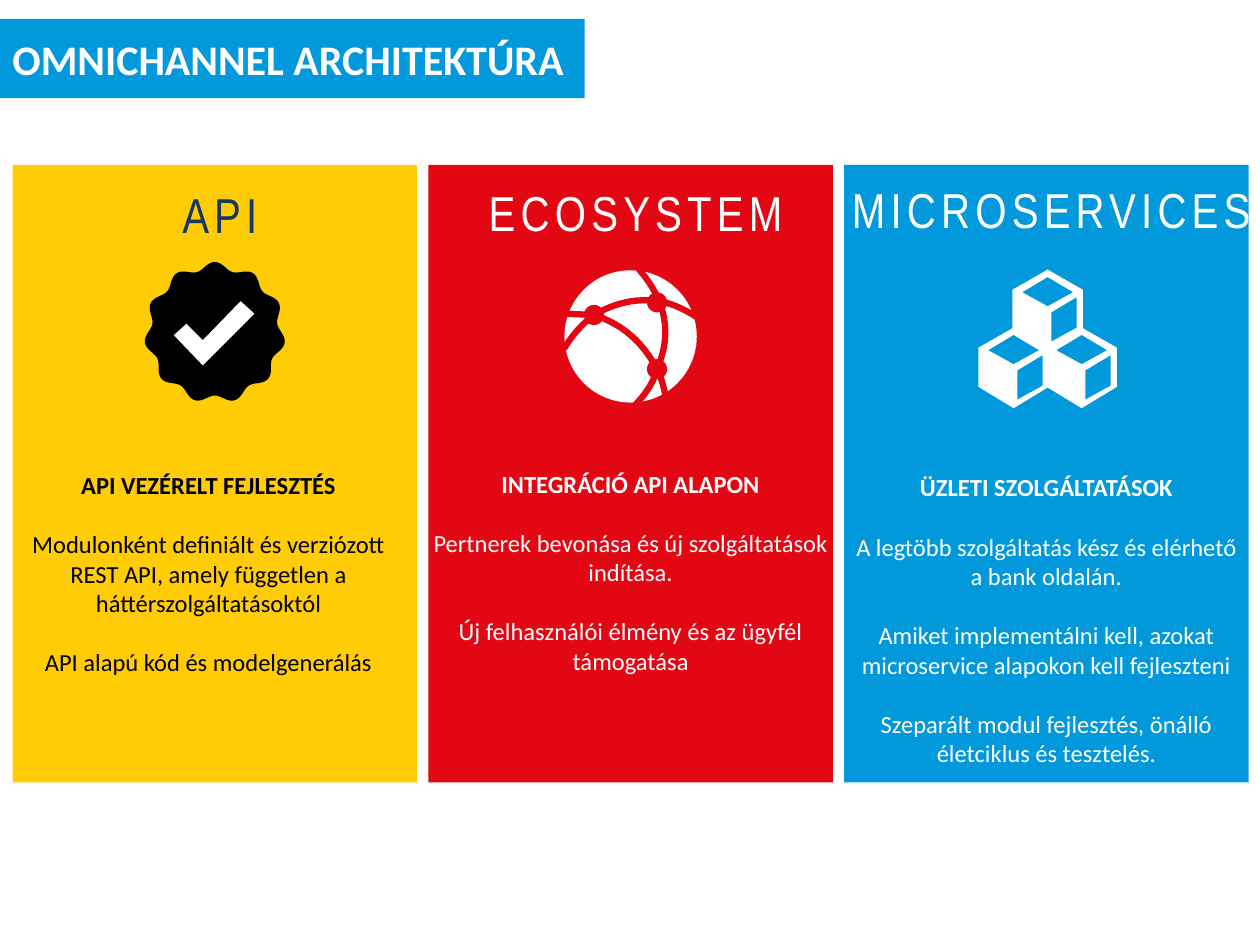
"""Builds the omnichannel architecture slide with three illustrated columns."""
from math import cos, pi, sin

from pptx import Presentation
from pptx.dml.color import RGBColor
from pptx.enum.shapes import MSO_SHAPE
from pptx.enum.text import MSO_ANCHOR, PP_ALIGN
from pptx.util import Inches, Pt

RECTANGLE, OVAL = MSO_SHAPE.RECTANGLE, MSO_SHAPE.OVAL
LEFT, CENTER = PP_ALIGN.LEFT, PP_ALIGN.CENTER
TOP, MIDDLE = MSO_ANCHOR.TOP, MSO_ANCHOR.MIDDLE

COLORS = {
    "blue": "0199DB", "yellow": "FFCC06", "red": "E30613",
    "navy": "17375E", "white": "FFFFFF", "black": "000000",
}
COLUMNS, ROWS = 100, 75
PANEL_LEFT, PANEL_TOP, PANEL_WIDTH, PANEL_HEIGHT, PANEL_PITCH = 1, 13.1, 32.1, 49, 33

PANELS = [
    dict(fill="yellow", heading="API", heading_color="navy", heading_top=14.6,
         heading_width=21.9, text_color="black", text_top=36.9, text_width=31.1,
         lines=["API VEZÉRELT FEJLESZTÉS",
                "Modulonként definiált és verziózott REST API, amely független a "
                "háttérszolgáltatásoktól",
                "API alapú kód és modelgenerálás"]),
    dict(fill="red", heading="ECOSYSTEM", heading_color="white", heading_top=14.5,
         heading_width=32, text_color="white", text_top=36.8, text_width=32.1,
         lines=["INTEGRÁCIÓ API ALAPON",
                "Pertnerek bevonása és új szolgáltatások indítása.",
                "Új felhasználói élmény és az ügyfél támogatása"]),
    dict(fill="blue", heading="MICROSERVICES", heading_color="white", heading_top=14.2,
         heading_width=40.4, text_color="white", text_top=37.1, text_width=32.1,
         lines=["ÜZLETI SZOLGÁLTATÁSOK",
                "A legtöbb szolgáltatás kész és elérhető a bank oldalán.",
                "Amiket implementálni kell, azokat microservice alapokon kell fejleszteni",
                "Szeparált modul fejlesztés, önálló életciklus és tesztelés."]),
]

CHECK_MARK = [(-3.25, 0.2), (-2.25, -0.7), (-0.95, 0.6), (2.05, -2.5), (3.15, -1.5), (-0.95, 2.6)]
GLOBE_NODES = [(-2.9, -1.7), (2.1, -2.7), (2.1, 2.6)]
GLOBE_ARCS = [
    [(-5.5, -1.8), (-4, -1.75), (-2.9, -1.7)],
    [(-2.9, -1.7), (-0.4, -2.7), (2.1, -2.8)],
    [(2.1, -2.8), (3.6, -2.4), (5.3, -1.5)],
    [(0.6, -5.4), (2.65, -1.5), (2.1, 2.6)],
    [(-2.9, -1.7), (0, -0.1), (2.1, 2.6)],
    [(-2.9, -1.7), (-4.2, -0.5), (-5.3, 1)],
    [(2.1, 2.6), (1.5, 4), (0.4, 5.4)],
    [(2.1, 2.6), (2.5, 3.6), (2.8, 4.9)],
]
CUBE_OUTLINE = [(0, -3.1), (2.8, -1.5), (2.8, 1.6), (0, 3.3), (-2.8, 1.6), (-2.8, -1.5)]
CUBE_TOP = [(-2, -1.3), (0, -2.5), (2, -1.3), (0, -0.2)]
CUBE_SIDE = [(0.3, 0.3), (2.3, -0.9), (2.3, 1.5), (0.3, 2.6)]


class SlideBuilder:
    """Holds the slide, its grid and its style."""

    def __init__(self, presentation):
        self.slide = presentation.slides.add_slide(presentation.slide_layouts[6])
        self.shapes = self.slide.shapes
        self.column = presentation.slide_width / COLUMNS
        self.row = presentation.slide_height / ROWS

    def x(self, columns):
        return round(columns * self.column)

    def y(self, rows):
        return round(rows * self.row)

    def box(self, left, top, width, height):
        return self.x(left), self.y(top), self.x(width), self.y(height)

    def color(self, name):
        return RGBColor.from_string(COLORS[name])

    def paint(self, shape, fill):
        shape.shadow.inherit = False
        shape.fill.solid()
        shape.fill.fore_color.rgb = self.color(fill)
        shape.line.fill.background()

    def block(self, kind, area, fill):
        block = self.shapes.add_shape(kind, *self.box(*area))
        self.paint(block, fill)
        return block

    def disc(self, center, radius, fill):
        x, y = center
        self.block(OVAL, (x - radius, y - radius, 2 * radius, 2 * radius), fill)

    def outline(self, center, offsets, close=True):
        start, *rest = [(self.x(center[0] + dx), self.y(center[1] + dy)) for dx, dy in offsets]
        builder = self.shapes.build_freeform(*start, scale=1.0)
        builder.add_line_segments(rest, close=close)
        return builder.convert_to_shape()

    def polygon(self, center, offsets, fill):
        self.paint(self.outline(center, offsets), fill)

    def arc(self, center, through, color, steps=12):
        (x0, y0), (x1, y1), (x2, y2) = through
        points = []
        for step in range(steps + 1):
            t = step / steps
            a, b, c = (1 - t) * (1 - 2 * t), 4 * t * (1 - t), t * (2 * t - 1)
            points.append((a * x0 + b * x1 + c * x2, a * y0 + b * y1 + c * y2))
        curve = self.outline(center, points, close=False)
        curve.shadow.inherit = False
        curve.fill.background()
        curve.line.color.rgb = self.color(color)
        curve.line.width = Pt(3.6)

    def set_text(self, shape, lines, font, size, color, align, anchor, insets, gap=0, bold=False):
        frame = shape.text_frame
        frame.word_wrap = True
        frame.vertical_anchor = anchor
        (frame.margin_left, frame.margin_top,
         frame.margin_right, frame.margin_bottom) = map(Inches, insets)
        frame.text = "\n".join(lines)
        for index, paragraph in enumerate(frame.paragraphs):
            paragraph.alignment = align
            if index:
                paragraph.space_before = Pt(gap)
            for run in paragraph.runs:
                run.font.name, run.font.size = font, Pt(size)
                run.font.bold = bold and index == 0
                run.font.color.rgb = self.color(color)

    def title(self, text):
        banner = self.block(RECTANGLE, (0, 1.5, 46.4, 6.3), "blue")
        self.set_text(banner, [text], "Calibri", 24, "white", LEFT, MIDDLE,
                      (0.1, 0.05, 0.1, 0.05), bold=True)

    def heading(self, text, center, top, width, color):
        heading = self.shapes.add_textbox(*self.box(center - width / 2, top, width, 4.7))
        self.set_text(heading, [text], "Arial Narrow", 28, color, CENTER, MIDDLE,
                      (0.12, 0, 0.04, 0))
        for run in heading.text_frame.paragraphs[0].runs:
            run._r.get_or_add_rPr().set("spc", "300")

    def description(self, lines, left, top, width, color):
        description = self.shapes.add_textbox(*self.box(left, top, width, 22.6))
        self.set_text(description, lines, "Calibri", 14, color, CENTER, TOP,
                      (0.04, 0.04, 0.04, 0.08), gap=17, bold=True)

    def panel(self, left, panel):
        center = left + PANEL_WIDTH / 2
        self.block(RECTANGLE, (left, PANEL_TOP, PANEL_WIDTH, PANEL_HEIGHT), panel["fill"])
        self.heading(panel["heading"], center, panel["heading_top"],
                     panel["heading_width"], panel["heading_color"])
        self.description(panel["lines"], left, panel["text_top"],
                         panel["text_width"], panel["text_color"])

    def badge(self, center, lobes=11, points=220):
        scallops = []
        for step in range(points):
            angle = 2 * pi * step / points
            radius = 5.3 + 0.3 * cos(lobes * angle)
            scallops.append((radius * sin(angle), -radius * cos(angle)))
        self.polygon(center, scallops, "black")
        self.polygon(center, CHECK_MARK, "white")

    def globe(self, center):
        self.disc(center, 5.25, "white")
        for through in GLOBE_ARCS:
            self.arc(center, through, "red")
        for dx, dy in GLOBE_NODES:
            self.disc((center[0] + dx, center[1] + dy), 0.8, "red")

    def cubes(self, center):
        x, y = center
        for cube in [(x, y - 2.3), (x - 2.7, y + 2.3), (x + 2.7, y + 2.3)]:
            self.polygon(cube, CUBE_OUTLINE, "white")
            self.polygon(cube, CUBE_TOP, "blue")
            self.polygon(cube, CUBE_SIDE, "blue")


def main():
    presentation = Presentation()
    presentation.slide_width, presentation.slide_height = Inches(10), Inches(7.5)
    builder = SlideBuilder(presentation)
    builder.title("OMNICHANNEL ARCHITEKTÚRA")
    for index, panel in enumerate(PANELS):
        builder.panel(PANEL_LEFT + index * PANEL_PITCH, panel)
    builder.badge((17.05, 26.4))
    builder.globe((50.05, 26.7))
    builder.cubes((83.15, 26.8))
    presentation.save("out.pptx")


if __name__ == "__main__":
    main()
